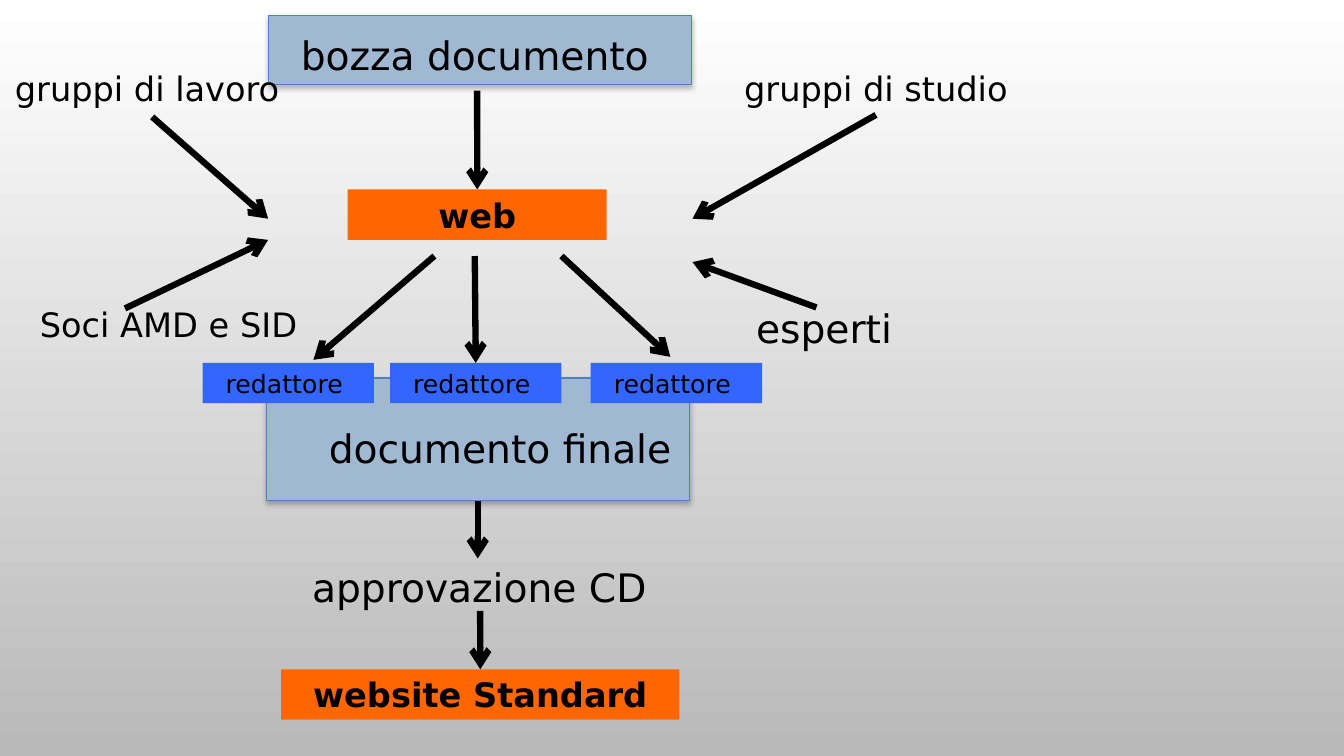
import pptx
import pptx.dml.color
import pptx.enum.shapes
import pptx.enum.text
import pptx.oxml
import pptx.oxml.ns
import pptx.util

COLUMNS, ROWS = 40, 30
TOP, BOTTOM = 0, 2
BLACK, ORANGE, BLUE, STEEL, EDGE = "000000", "FF6600", "3366FF", "A1B8D3", "4F81BD"


def colour(value):
    return pptx.dml.color.RGBColor.from_string(value)


def drawing(tag, body=""):
    namespace = pptx.oxml.ns.nsdecls("a")
    return pptx.oxml.parse_xml(f"<a:{tag} {namespace}{body}")


class FlowPage:
    """Draws flow elements on one slide, measured in grid columns and rows."""

    font = {"name": "DejaVu Sans", "bold": False}
    frame = {
        "word_wrap": True,
        "auto_size": pptx.enum.text.MSO_AUTO_SIZE.SHAPE_TO_FIT_TEXT,
        "vertical_anchor": pptx.enum.text.MSO_ANCHOR.TOP,
    }

    def __init__(self, deck):
        self.column = deck.slide_width / COLUMNS
        self.row = deck.slide_height / ROWS
        self.page = deck.slides.add_slide(deck.slide_layouts[6])

    def place(self, *lengths):
        return [round(length * unit) for length, unit in zip(lengths, (self.column, self.row) * 2)]

    def background(self, *shades):
        fill = self.page.background.fill
        fill.gradient()
        fill.gradient_angle = 270
        for stop, shade in zip(fill.gradient_stops, shades):
            stop.color.rgb = colour(shade)

    def caption(self, shape, text, size, **extra):
        for name, value in self.frame.items():
            setattr(shape.text_frame, name, value)
        para = shape.text_frame.paragraphs[0]
        para.alignment = pptx.enum.text.PP_ALIGN.CENTER
        span = para.add_run()
        span.text = text
        span.font.color.rgb = colour(BLACK)
        for name, value in {**self.font, "size": pptx.util.Pt(size), **extra}.items():
            setattr(span.font, name, value)

    def label(self, area, text, size):
        self.caption(self.page.shapes.add_textbox(*self.place(*area)), text, size)

    def box(self, area, fill):
        kind = pptx.enum.shapes.MSO_SHAPE.RECTANGLE
        shape = self.page.shapes.add_shape(kind, *self.place(*area))
        shape.shadow.inherit = False
        shape.fill.solid()
        shape.fill.fore_color.rgb = colour(fill)
        shape.line.fill.background()
        return shape

    def step(self, area, fill, text, size, **extra):
        shape = self.box(area, fill)
        self.caption(shape, text, size, **extra)
        return shape

    def document(self, area):
        shape = self.box(area, STEEL)
        shape.line.color.rgb = colour(EDGE)
        shape.line.width = pptx.util.Pt(0.75)
        effects = shape.element.spPr.find(pptx.oxml.ns.qn("a:effectLst"))
        effects.append(drawing("outerShdw", (
            f' blurRad="{pptx.util.Pt(4)}" dist="{pptx.util.Pt(2)}" dir="5400000" rotWithShape="0">'
            f'<a:srgbClr val="{BLACK}"><a:alpha val="28000"/></a:srgbClr></a:outerShdw>')))
        return shape

    def arrow(self, start, end, source=None, target=None):
        kind = pptx.enum.shapes.MSO_CONNECTOR.STRAIGHT
        line = self.page.shapes.add_connector(kind, *self.place(*start, *end))
        if source is not None:
            line.begin_connect(source, BOTTOM)
        if target is not None:
            line.end_connect(target, TOP)
        line.line.color.rgb = colour(BLACK)
        line.line.width = pptx.util.Pt(4.5)
        properties = line.element.spPr
        properties.find(pptx.oxml.ns.qn("a:ln")).append(drawing("tailEnd", ' type="arrow"/>'))
        properties.append(drawing("effectLst", "/>"))


def main():
    deck = pptx.Presentation()
    deck.slide_width = pptx.util.Inches(13.33)
    deck.slide_height = pptx.util.Inches(7.5)
    flow = FlowPage(deck)
    flow.background("FFFFFF", "B9B9B9")

    flow.document((7.98, 0.6, 12.6, 2.76))
    final = flow.document((7.92, 15, 12.6, 4.88))
    for area, text, size in (
        ((0, 11.88, 10.35, 2), "Soci AMD e SID ", 24),
        ((21.69, 2.48, 8.76, 2), "gruppi di studio", 24),
        ((0, 2.48, 8.76, 2), "gruppi di lavoro", 24),
        ((7.83, 1.04, 12.6, 2.28), "bozza documento", 28),
        ((19.35, 11.88, 10.35, 2.28), "esperti", 28),
        ((8.58, 16.64, 12.6, 2.28), "documento finale", 28),
        ((8.58, 22.16, 11.37, 2.28), "approvazione CD", 28),
    ):
        flow.label(area, text, size)

    web = flow.step((10.35, 7.52, 7.71, 2), ORANGE, "web", 24, bold=True)
    website = flow.step((8.37, 26.56, 11.85, 2), ORANGE, "website Standard", 24, bold=True)
    editors = [flow.step((left, 14.4, 5.1, 1.6), BLUE, "redattore ", 18)
               for left in (6.03, 11.61, 17.58)]

    for start, end in (
        ((26.07, 4.56), (20.61, 8.68)),
        ((4.53, 4.64), (7.98, 8.68)),
        ((3.72, 12.24), (7.98, 9.52)),
        ((24.3, 12.2), (20.61, 10.4)),
        ((12.93, 10.16), (9.33, 14.28)),
        ((16.71, 10.16), (19.95, 14.16)),
    ):
        flow.arrow(start, end)
    flow.arrow((14.2, 3.6), (14.2, 7.52), target=web)
    flow.arrow((14.13, 10.16), (14.16, 14.4), target=editors[1])
    flow.arrow((14.22, 19.88), (14.22, 22.16), source=final)
    flow.arrow((14.29, 24.24), (14.29, 26.56), target=website)

    deck.save("out.pptx")


if __name__ == "__main__":
    main()
